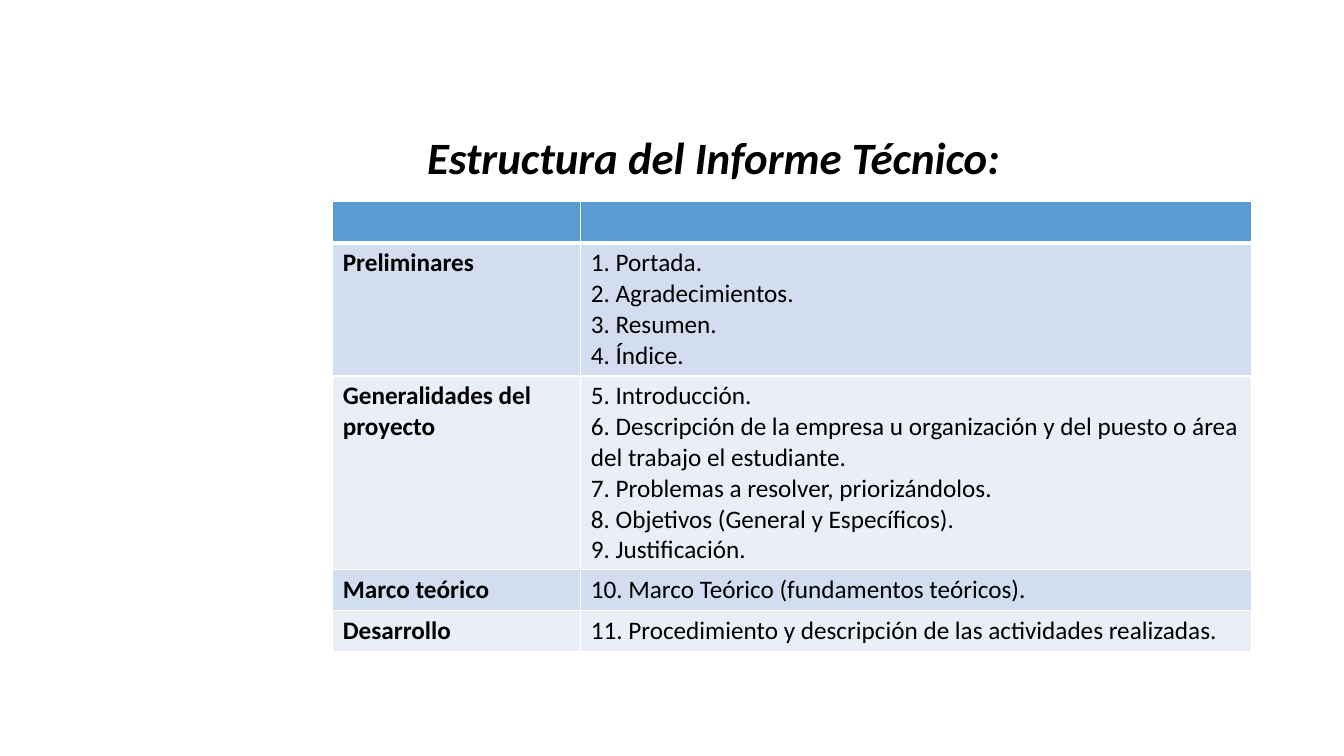
from dataclasses import dataclass

from lxml import etree
from pptx import Presentation
from pptx.dml.color import RGBColor
from pptx.enum.text import MSO_ANCHOR, PP_ALIGN
from pptx.oxml.ns import qn
from pptx.slide import Slide
from pptx.table import _Cell
from pptx.text.text import _Paragraph
from pptx.util import Emu, Pt

EMU_PER_PX = 9144
CENTER = PP_ALIGN.CENTER
MIDDLE = MSO_ANCHOR.MIDDLE


@dataclass(frozen=True)
class Theme:
    font: str = "Calibri"
    text: str = "000000"
    border: str = "FFFFFF"
    header: str = "5B9BD5"
    bands: tuple[str, str] = ("D2DEEF", "EAEFF7")
    title_size: int = 32
    body_size: int = 18
    thin: int = 1
    thick: int = 3


@dataclass(frozen=True)
class Section:
    name: str
    items: tuple[str, ...]
    height: int


THEME = Theme()
SLIDE_SIZE = (1333, 750)
TITLE_BOX = (158, 127, 1100, 63)
TABLE_ORIGIN = (330, 200)
COLUMN_WIDTHS = (246, 665)
ROW_HEIGHT = 41

SECTIONS = (
    Section("Preliminares", (
        "1. Portada.",
        "2. Agradecimientos.",
        "3. Resumen.",
        "4. Índice.",
    ), 132),
    Section("Generalidades del proyecto", (
        "5. Introducción.",
        "6. Descripción de la empresa u organización y del puesto o área "
        "del trabajo el estudiante.",
        "7. Problemas a resolver, priorizándolos.",
        "8. Objetivos (General y Específicos).",
        "9. Justificación.",
    ), 192),
    Section("Marco teórico", (
        "10. Marco Teórico (fundamentos teóricos).",
    ), ROW_HEIGHT),
    Section("Desarrollo", (
        "11. Procedimiento y descripción de las actividades realizadas.",
    ), ROW_HEIGHT),
)


def px(n: int) -> Emu:
    return Emu(n * EMU_PER_PX)


def write(p: _Paragraph, text: str, size: int, bold: bool = False,
          italic: bool = False) -> None:
    r = p.add_run()
    r.text = text
    formats = {"name": THEME.font, "size": Pt(size), "bold": bold, "italic": italic}
    for name, value in formats.items():
        setattr(r.font, name, value)
    r.font.color.rgb = RGBColor.from_string(THEME.text)


def add_title(slide: Slide, text: str) -> None:
    tf = slide.shapes.add_textbox(*map(px, TITLE_BOX)).text_frame
    tf.word_wrap = True
    tf.vertical_anchor = MIDDLE
    p = tf.paragraphs[0]
    p.alignment = CENTER
    p.line_spacing = 0.9
    write(p, text, THEME.title_size, bold=True, italic=True)


def style_cell(cell: _Cell, fill: str, top: int, bottom: int) -> None:
    """Set the fill and the four borders; top and bottom are widths in points."""
    tc_pr = cell._tc.get_or_add_tcPr()
    widths = {"a:lnL": THEME.thin, "a:lnR": THEME.thin, "a:lnT": top, "a:lnB": bottom}
    for tag, width in widths.items():
        line = etree.SubElement(tc_pr, qn(tag), w=str(Pt(width)))
        solid = etree.SubElement(line, qn("a:solidFill"))
        etree.SubElement(solid, qn("a:srgbClr"), val=THEME.border)
    cell.fill.solid()
    cell.fill.fore_color.rgb = RGBColor.from_string(fill)


def write_cell(cell: _Cell, lines: tuple[str, ...], bold: bool) -> None:
    tf = cell.text_frame
    for i, line in enumerate(lines):
        p = tf.add_paragraph() if i else tf.paragraphs[0]
        write(p, line, THEME.body_size, bold=bold)


def add_sections_table(slide: Slide) -> None:
    heights = [ROW_HEIGHT, *(section.height for section in SECTIONS)]
    size = (sum(COLUMN_WIDTHS), sum(heights))
    table = slide.shapes.add_table(
        len(heights), len(COLUMN_WIDTHS), *map(px, TABLE_ORIGIN + size)).table
    table.horz_banding = False
    for column, width in zip(table.columns, COLUMN_WIDTHS):
        column.width = px(width)
    for i, (row, height) in enumerate(zip(table.rows, heights)):
        row.height = px(height)
        fill = THEME.bands[(i - 1) % 2] if i else THEME.header
        top = THEME.thick if i == 1 else THEME.thin
        bottom = THEME.thin if i else THEME.thick
        for cell in row.cells:
            style_cell(cell, fill, top, bottom)
    for i, section in enumerate(SECTIONS, start=1):
        write_cell(table.cell(i, 0), (section.name,), bold=True)
        write_cell(table.cell(i, 1), section.items, bold=False)


def main() -> None:
    prs = Presentation()
    prs.slide_width, prs.slide_height = map(px, SLIDE_SIZE)
    slide = prs.slides.add_slide(prs.slide_layouts[6])
    add_title(slide, "Estructura del Informe Técnico:")
    add_sections_table(slide)
    prs.save("out.pptx")


if __name__ == "__main__":
    main()
